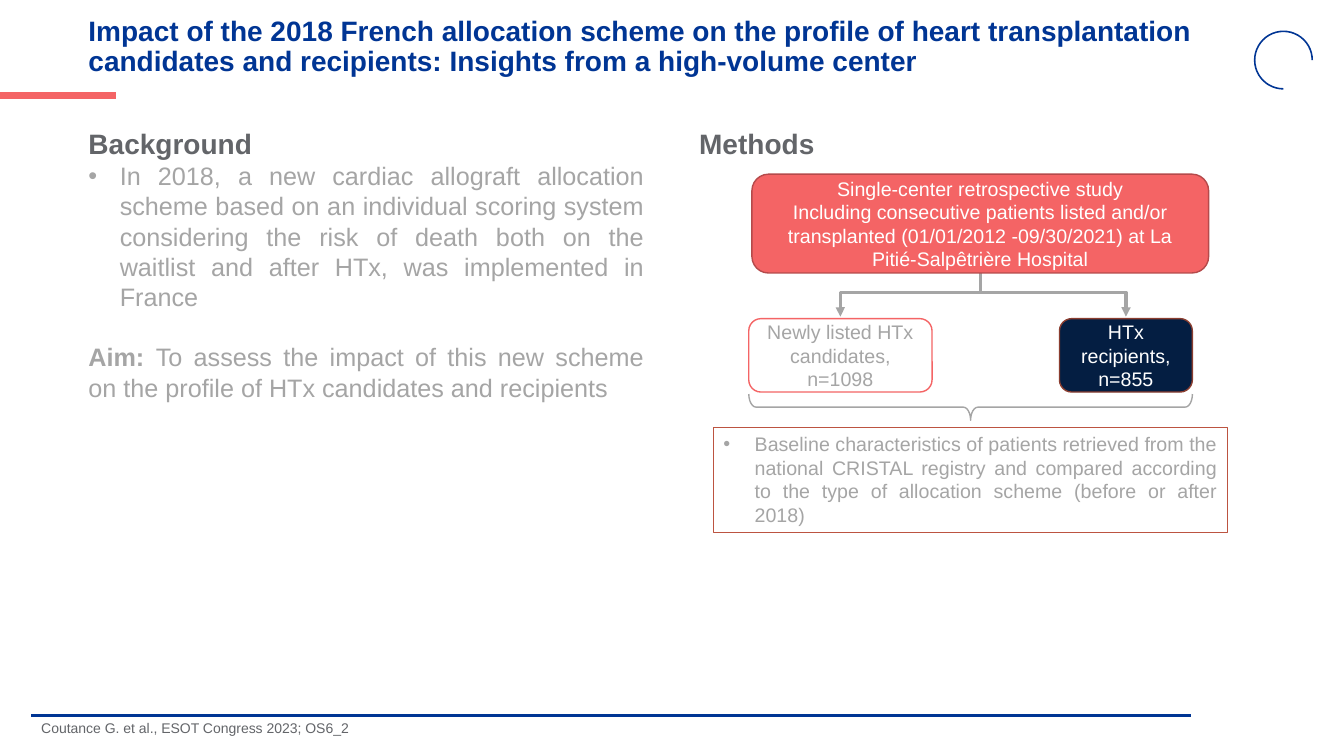
from lxml import etree
from pptx import Presentation
from pptx import util as u
from pptx.dml.color import RGBColor
from pptx.enum import shapes, text
from pptx.oxml import ns

COLORS = {"blue": "003594", "coral": "F46465", "slate": "636569", "gray": "A5A5A5",
          "white": "FFFFFF", "navy": "041E42", "maroon": "B54A4B", "rust": "BC5441",
          "brown": "8B3E30"}
FONT = "Arial"
INDENT = 0.79
LEFT, CENTER, JUSTIFY = text.PP_ALIGN.LEFT, text.PP_ALIGN.CENTER, text.PP_ALIGN.JUSTIFY
TOP, MIDDLE = text.MSO_ANCHOR.TOP, text.MSO_ANCHOR.MIDDLE

TITLE = ("Impact of the 2018 French allocation scheme on the profile of heart transplantation "
         "candidates and recipients: Insights from a high-volume center")
CITATION = "Coutance G. et al., ESOT Congress 2023; OS6_2"
BACKGROUND = ("In 2018, a new cardiac allograft allocation scheme based on an individual scoring "
              "system considering the risk of death both on the waitlist and after HTx, was "
              "implemented in France")
AIM = ("Aim: ", "To assess the impact of this new scheme on the profile of HTx candidates and recipients")
STUDY = ["Single-center retrospective study",
         "Including consecutive patients listed and/or transplanted (01/01/2012 -09/30/2021) "
         "at La Pitié-Salpêtrière Hospital"]
CANDIDATES = ["Newly listed HTx candidates,", "n=1098"]
RECIPIENTS = ["HTx recipients, n=855"]
BASELINE = ("Baseline characteristics of patients retrieved from the national CRISTAL registry and "
            "compared according to the type of allocation scheme (before or after 2018)")

STUDY_AT = (18.95, 4.39, 11.51, 2.49)
CANDIDATES_AT = (18.87, 8.03, 4.62, 1.85)
RECIPIENTS_AT = (26.7, 8.03, 3.35, 1.85)
BASELINE_AT = (17.98, 10.77, 12.95, 2.64)
NODES = [(STUDY, STUDY_AT, "coral", "maroon", "white"),
         (RECIPIENTS, RECIPIENTS_AT, "navy", "brown", "white"),
         (CANDIDATES, CANDIDATES_AT, "white", "coral", "gray")]
BRANCH_Y = 7.37
ARROW_END = 7.98

deck = Presentation()
deck.slide_width, deck.slide_height = u.Cm(33.87), u.Cm(19.05)
page = deck.slides.add_slide(deck.slide_layouts[6])


def color(name):
    return RGBColor.from_string(COLORS[name])


def style(para, size, tint, bold=False, align=LEFT, spacing=None):
    para.alignment = align
    if spacing:
        para.line_spacing = spacing
    for span in para.runs:
        span.font.name = FONT
        span.font.size = u.Pt(size)
        span.font.bold = bold
        span.font.color.rgb = color(tint)


def add_bullet(para):
    props = para._p.get_or_add_pPr()
    props.set("marL", str(u.Cm(INDENT)))
    props.set("indent", str(-u.Cm(INDENT)))
    font = etree.SubElement(props, ns.qn("a:buFont"))
    font.set("typeface", FONT)
    etree.SubElement(props, ns.qn("a:buChar")).set("char", "•")


def add_text(at, anchor=TOP):
    box = page.shapes.add_textbox(*map(u.Cm, at))
    box.text_frame.word_wrap = True
    box.text_frame.vertical_anchor = anchor
    return box.text_frame


def add_label(at, words, size, tint, bold=False, anchor=TOP, spacing=None):
    frame = add_text(at, anchor)
    frame.text = words
    style(frame.paragraphs[0], size, tint, bold, spacing=spacing)
    return frame


def add_shape(kind, at, line, width, fill=None):
    shape = page.shapes.add_shape(kind, *map(u.Cm, at))
    shape.shadow.inherit = False
    shape.line.color.rgb = color(line)
    shape.line.width = u.Pt(width)
    if fill:
        shape.fill.solid()
        shape.fill.fore_color.rgb = color(fill)
    else:
        shape.fill.background()
    return shape


def add_line(start, end, tint, width, kind=shapes.MSO_CONNECTOR.STRAIGHT):
    line = page.shapes.add_connector(kind, *map(u.Cm, start + end))
    line.line.color.rgb = color(tint)
    line.line.width = u.Pt(width)
    etree.SubElement(line._element.spPr, ns.qn("a:effectLst"))
    return line


def add_branch(start, end):
    branch = add_line(start, end, "gray", 2.25, shapes.MSO_CONNECTOR.ELBOW)
    props = branch._element.spPr
    guide = etree.SubElement(props.find(".//" + ns.qn("a:avLst")), ns.qn("a:gd"))
    guide.set("name", "adj1")
    guide.set("fmla", "val 100100")
    etree.SubElement(props.find(ns.qn("a:ln")), ns.qn("a:tailEnd")).set("type", "triangle")


def middle(at):
    return at[0] + at[2] / 2


add_line((0, 2.41), (2.92, 2.41), "coral", 4.5)
add_line((0.79, 18.03), (30.02, 18.03), "blue", 1.5)
add_label((1.98, 0.38, 29.21, 1.63), TITLE, 20, "blue", True, MIDDLE, 0.9)
add_label((0.79, 18.06, 19.91, 0.86), CITATION, 10, "slate", spacing=0.9)

ring = add_shape(shapes.MSO_SHAPE.ARC, (31.62, 0.79, 1.45, 1.45), "blue", 1.13)
ring.adjustments[0] = 54
ring.adjustments[1] = 0

frame = add_label((1.98, 3.07, 14.5, 7.26), "Background", 20, "slate", True)
para = frame.add_paragraph()
para.text = BACKGROUND
add_bullet(para)
style(para, 18, "gray", align=JUSTIFY)
para = frame.add_paragraph()
for words in AIM:
    para.add_run().text = words
style(para, 18, "gray", align=JUSTIFY)
para.runs[0].font.bold = True
para.space_before = u.Pt(21.5)

add_label((17.37, 3.07, 14.76, 1.12), "Methods", 20, "slate", True)

trunk_x = middle(STUDY_AT)
for target in (RECIPIENTS_AT, CANDIDATES_AT):
    add_branch((trunk_x, BRANCH_Y), (middle(target), ARROW_END))
add_line((trunk_x, STUDY_AT[1] + STUDY_AT[3]), (trunk_x, BRANCH_Y), "gray", 2.25)

for lines, at, fill, line, tint in NODES:
    node = add_shape(shapes.MSO_SHAPE.ROUNDED_RECTANGLE, at, line, 1, fill)
    node.text_frame.word_wrap = True
    node.text_frame.vertical_anchor = MIDDLE
    node.text_frame.text = "\n".join(lines)
    for para in node.text_frame.paragraphs:
        style(para, 14, tint, align=CENTER)

brace = add_shape(shapes.MSO_SHAPE.RIGHT_BRACE, (24.13, 4.67, 0.66, 11.18), "gray", 1)
brace.rotation = 90
brace.adjustments[0] = 0.28

panel = add_shape(shapes.MSO_SHAPE.RECTANGLE, BASELINE_AT, "rust", 0.75)
panel.text_frame.word_wrap = True
panel.text_frame.vertical_anchor = TOP
panel.text_frame.text = BASELINE
para = panel.text_frame.paragraphs[0]
add_bullet(para)
style(para, 14, "gray", align=JUSTIFY)

deck.save("out.pptx")
